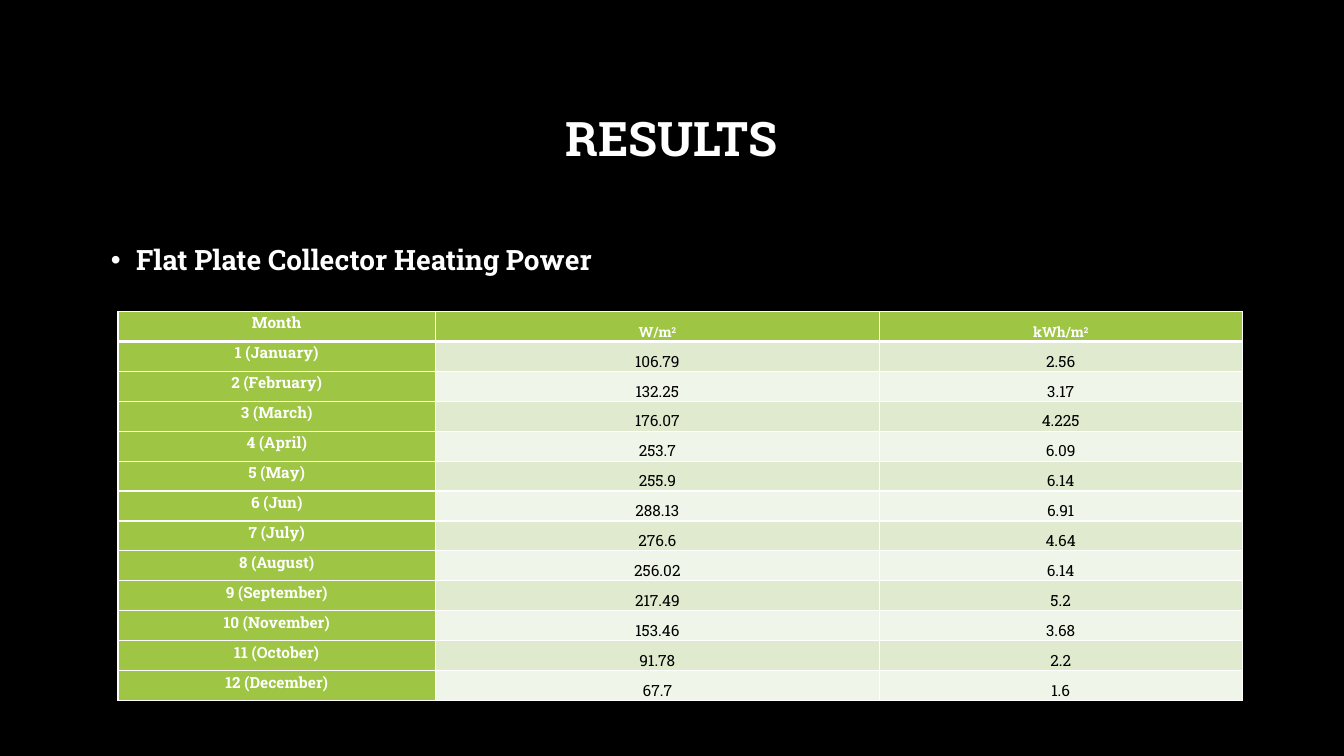
from dataclasses import dataclass

from lxml.etree import SubElement
from pptx import Presentation
from pptx.dml.color import RGBColor
from pptx.enum.text import MSO_ANCHOR, MSO_AUTO_SIZE, PP_ALIGN
from pptx.oxml.ns import qn
from pptx.util import Inches, Pt


@dataclass(frozen=True)
class Theme:
    font: str = "Roboto Slab"
    background: str = "000000"
    light: str = "FFFFFF"
    dark: str = "000000"
    green: str = "9EC544"
    bands: tuple[str, str] = ("DFEACF", "F0F5E9")
    title_size: int = 34
    body_size: int = 20
    cell_size: int = 11
    unit_size: int = 10
    border: int = 1
    header_border: int = 3


@dataclass(frozen=True)
class Reading:
    month: str
    power: str
    energy: str


@dataclass(frozen=True)
class CellStyle:
    fill: str
    color: str
    bold: bool
    size: int
    anchor: MSO_ANCHOR
    top: int
    bottom: int


THEME = Theme()
READINGS = [
    Reading("1 (January)", "106.79", "2.56"),
    Reading("2 (February)", "132.25", "3.17"),
    Reading("3 (March)", "176.07", "4.225"),
    Reading("4 (April)", "253.7", "6.09"),
    Reading("5 (May)", "255.9", "6.14"),
    Reading("6 (Jun)", "288.13", "6.91"),
    Reading("7 (July)", "276.6", "4.64"),
    Reading("8 (August)", "256.02", "6.14"),
    Reading("9 (September)", "217.49", "5.2"),
    Reading("10 (November)", "153.46", "3.68"),
    Reading("11 (October)", "91.78", "2.2"),
    Reading("12 (December)", "67.7", "1.6"),
]
HEADER = ("Month", "W/m²", "kWh/m²")
COLUMN_WIDTHS = (3.15, 4.4, 3.6)
TABLE_HEIGHT = 3.86


def format_font(p, size: int, color: str, bold: bool) -> None:
    p.font.name = THEME.font
    p.font.size = Pt(size)
    p.font.bold = bold
    p.font.color.rgb = RGBColor.from_string(color)


def fill_placeholder(shape, text: str, box: tuple, size: int):
    """Move a placeholder, give it one bold paragraph and return that paragraph."""
    shape.left, shape.top, shape.width, shape.height = map(Inches, box)
    tf = shape.text_frame
    tf.auto_size = MSO_AUTO_SIZE.NONE
    tf.text = text
    p = tf.paragraphs[0]
    format_font(p, size, THEME.light, True)
    return p


def add_bullet(p, indent: float) -> None:
    pPr = p._p.get_or_add_pPr()
    pPr.set("marL", str(Inches(indent)))
    pPr.set("indent", str(-Inches(indent)))
    bullet = pPr.makeelement(qn("a:buChar"), {"char": "•"})
    pPr.insert_element_before(bullet, "a:tabLst", "a:defRPr", "a:extLst")


def add_cell_border(cell, side: str, width: int) -> None:
    ln = SubElement(cell._tc.get_or_add_tcPr(), qn(f"a:ln{side}"), w=str(Pt(width)))
    fill = SubElement(ln, qn("a:solidFill"))
    SubElement(fill, qn("a:srgbClr"), val=THEME.light)


def add_cell_text(p, text: str) -> None:
    """Write the text, turning a final ² into a superscript 2."""
    p.add_run().text = text.removesuffix("²")
    if text.endswith("²"):
        r = p.add_run()
        r.text = "2"
        r._r.get_or_add_rPr().set("baseline", "30000")


def style_for(row: int, col: int) -> CellStyle:
    is_header, is_month = row == 0, col == 0
    on_green = is_header or is_month
    return CellStyle(
        fill=THEME.green if on_green else THEME.bands[(row - 1) % 2],
        color=THEME.light if on_green else THEME.dark,
        bold=on_green,
        size=THEME.unit_size if is_header and not is_month else THEME.cell_size,
        anchor=MSO_ANCHOR.TOP if is_month else MSO_ANCHOR.BOTTOM,
        top=THEME.header_border if row == 1 else THEME.border,
        bottom=THEME.header_border if is_header else THEME.border,
    )


def draw_cell(cell, text: str, style: CellStyle) -> None:
    cell.margin_left = cell.margin_right = Inches(0.07)
    cell.margin_top = cell.margin_bottom = 0
    cell.vertical_anchor = style.anchor
    borders = {"L": THEME.border, "R": THEME.border, "T": style.top, "B": style.bottom}
    for side, width in borders.items():
        add_cell_border(cell, side, width)
    cell.fill.solid()
    cell.fill.fore_color.rgb = RGBColor.from_string(style.fill)
    p = cell.text_frame.paragraphs[0]
    p.alignment = PP_ALIGN.CENTER
    p.line_spacing = 1.07
    format_font(p, style.size, style.color, style.bold)
    add_cell_text(p, text)


def draw_table(s) -> None:
    rows = [HEADER] + [(m.month, m.power, m.energy) for m in READINGS]
    table = s.shapes.add_table(
        len(rows), len(HEADER), Inches(1.17), Inches(3.09),
        Inches(sum(COLUMN_WIDTHS)), Inches(TABLE_HEIGHT),
    ).table
    table.first_col = True
    for column, width in zip(table.columns, COLUMN_WIDTHS):
        column.width = Inches(width)
    for i, texts in enumerate(rows):
        table.rows[i].height = Inches(TABLE_HEIGHT / len(rows))
        for j, text in enumerate(texts):
            draw_cell(table.cell(i, j), text, style_for(i, j))


def main() -> None:
    prs = Presentation()
    prs.slide_width, prs.slide_height = Inches(13.33), Inches(7.5)
    s = prs.slides.add_slide(prs.slide_layouts[1])
    s.background.fill.solid()
    s.background.fill.fore_color.rgb = RGBColor.from_string(THEME.background)

    title, body = s.placeholders
    p = fill_placeholder(title, "RESULTS", (1, 0.67, 11.32, 1.45), THEME.title_size)
    p.alignment = PP_ALIGN.CENTER
    p.line_spacing = 0.9

    p = fill_placeholder(body, "Flat Plate Collector Heating Power",
                         (1, 2.29, 11.32, 4.04), THEME.body_size)
    p.line_spacing = 1.2
    p.space_before = Pt(10)
    add_bullet(p, 0.25)

    draw_table(s)
    prs.save("out.pptx")


if __name__ == "__main__":
    main()
